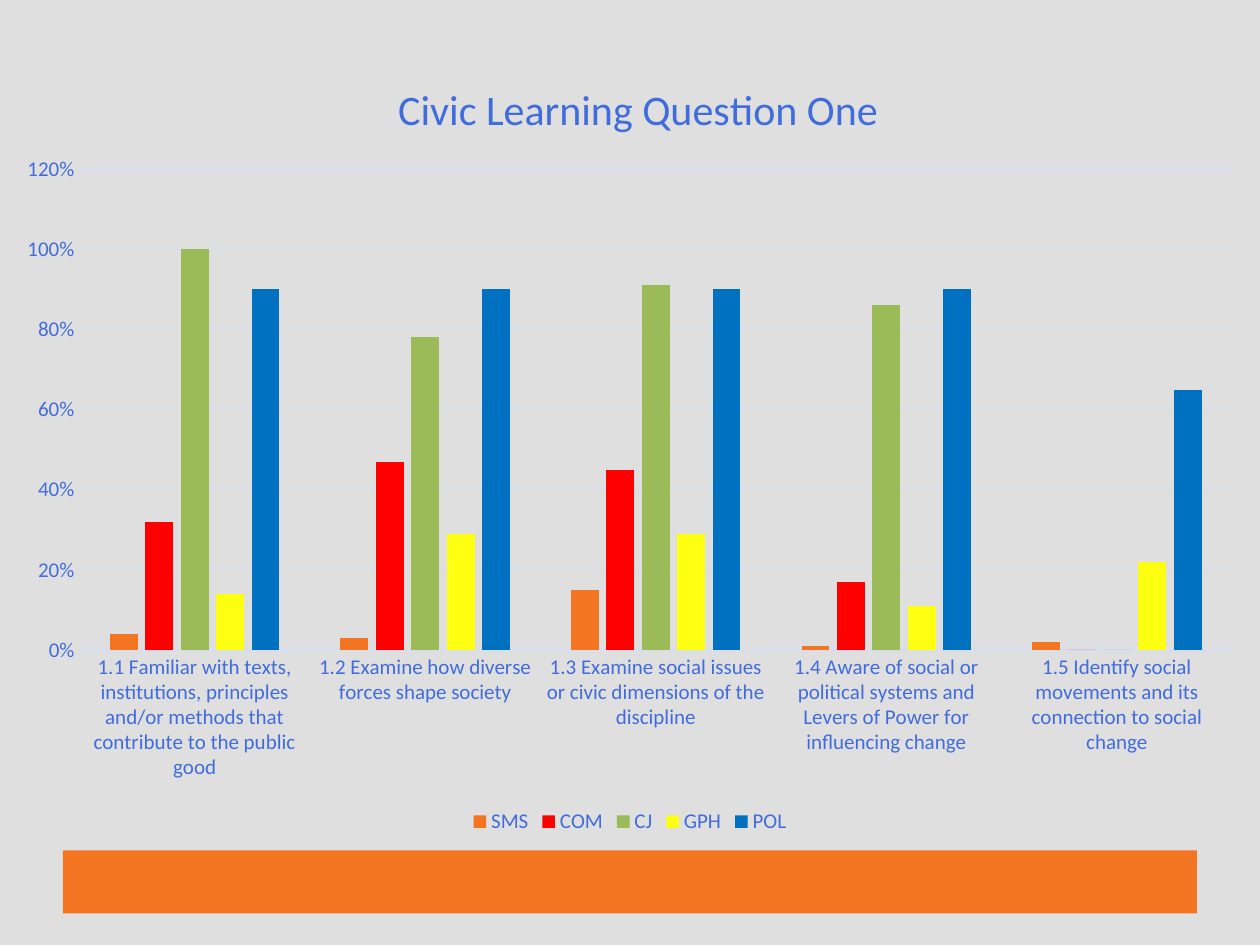
"""Build the slide that charts the answers to civic learning question one."""
from lxml.etree import SubElement
from pptx import Presentation
from pptx.chart.data import CategoryChartData
from pptx.dml.color import RGBColor
from pptx.enum.chart import XL_CHART_TYPE, XL_LEGEND_POSITION, XL_TICK_MARK
from pptx.enum.shapes import MSO_SHAPE
from pptx.oxml import parse_xml
from pptx.oxml.ns import nsdecls, qn
from pptx.util import Inches, Pt

COLORS = {
    "background": "DFDFDF", "text": "406CDC", "grid": "D3DDF7", "bar": "F37421",
    "SMS": "F37421", "COM": "FF0000", "CJ": "9BBB59", "GPH": "FFFF11", "POL": "0070C0",
}
SCORES = {
    "SMS": (0.04, 0.03, 0.15, 0.01, 0.02),
    "COM": (0.32, 0.47, 0.45, 0.17, 0),
    "CJ": (1, 0.78, 0.91, 0.86, 0),
    "GPH": (0.14, 0.29, 0.29, 0.11, 0.22),
    "POL": (0.9, 0.9, 0.9, 0.9, 0.65),
}
OUTCOMES = (
    "1.1 Familiar with texts, institutions, principles and/or methods that contribute to the public good",
    "1.2 Examine how diverse forces shape society",
    "1.3 Examine social issues or civic dimensions of the discipline",
    "1.4 Aware of social or political systems and Levers of Power for influencing change",
    "1.5 Identify social movements and its connection to social change",
)


def style_font(font, size):
    font.name = "Calibri"
    font.size = Pt(size)
    font.bold = False
    font.color.rgb = RGBColor.from_string(COLORS["text"])


def set_layout(parent, index, **shares):
    for old in parent.findall(qn("c:layout")):
        parent.remove(old)
    layout = parse_xml(f"<c:layout {nsdecls('c')}><c:manualLayout/></c:layout>")
    for name, value in shares.items():
        SubElement(layout[0], qn(f"c:{name}"), val=str(value))
    parent.insert(index, layout)


deck = Presentation()
deck.slide_width, deck.slide_height = Inches(10), Inches(7.5)
width, height = deck.slide_width, deck.slide_height
page = deck.slides.add_slide(deck.slide_layouts[6])
page.background.fill.solid()
page.background.fill.fore_color.rgb = RGBColor.from_string(COLORS["background"])

footer = page.shapes.add_shape(
    MSO_SHAPE.RECTANGLE, int(width * 0.05), int(height * 0.9), int(width * 0.9), height // 15)
footer.shadow.inherit = False
footer.fill.solid()
footer.fill.fore_color.rgb = RGBColor.from_string(COLORS["bar"])
footer.line.fill.background()

data = CategoryChartData(number_format="0%")
data.categories = OUTCOMES
for department, values in SCORES.items():
    data.add_series(department, values)
chart = page.shapes.add_chart(
    XL_CHART_TYPE.COLUMN_CLUSTERED, 0, Inches(0.33), width, Inches(6.33), data).chart
style_font(chart.font, 12)

chart.has_title = True
heading = chart.chart_title.text_frame.paragraphs[0]
span = heading.add_run()
span.text = "Civic Learning Question One"
style_font(span.font, 24)
chart.chart_title.include_in_layout = False
set_layout(chart.chart_title._element, 1, xMode="edge", yMode="edge", x=0.31, y=0.04)

plot = chart.plots[0]
plot.gap_width, plot.overlap = 219, -27
plot.vary_by_categories = False
for series in plot.series:
    series.format.fill.solid()
    series.format.fill.fore_color.rgb = RGBColor.from_string(COLORS[series.name])
    series.invert_if_negative = False
set_layout(plot._element.getparent(), 0, layoutTarget="inner", xMode="edge", yMode="edge",
           x=0.063, y=0.16, w=0.915, h=0.603)

scale = chart.value_axis
scale.minimum_scale, scale.maximum_scale, scale.major_unit = 0, 1.2, 0.2
scale.tick_labels.number_format = "0%"
scale.tick_labels.number_format_is_linked = False
scale.format.line.fill.background()
scale.has_major_gridlines = True
for axis in (scale, chart.category_axis):
    axis.major_tick_mark = axis.minor_tick_mark = XL_TICK_MARK.NONE
    style_font(axis.tick_labels.font, 12)
for line in (scale.major_gridlines.format.line, chart.category_axis.format.line):
    line.color.rgb = RGBColor.from_string(COLORS["grid"])
    line.width = Pt(0.75)

chart.has_legend = True
chart.legend.position = XL_LEGEND_POSITION.BOTTOM
chart.legend.include_in_layout = False
style_font(chart.legend.font, 12)

deck.save("out.pptx")
